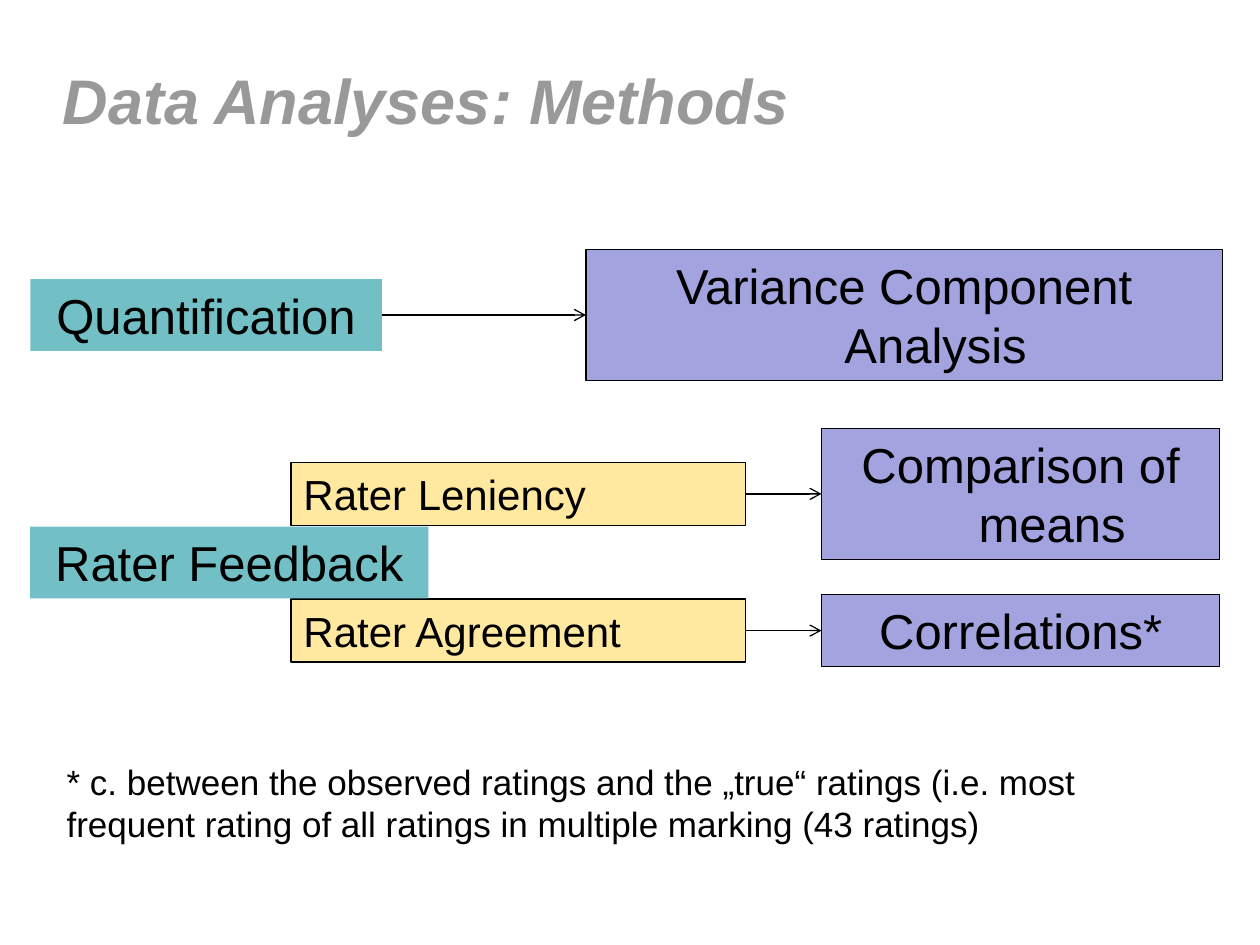
import pptx
import pptx.util
import pptx.dml.color
import pptx.enum.shapes
import pptx.enum.text
import pptx.oxml
import pptx.oxml.ns
from pptx.util import Inches

BLACK, GREY = "000000", "999999"
TEAL, YELLOW, VIOLET = "72BFC5", "FFE89F", "A3A3E0"
ALIGN = pptx.enum.text.PP_ALIGN
ANCHOR = pptx.enum.text.MSO_ANCHOR


def rgb(value):
    return pptx.dml.color.RGBColor.from_string(value)


def write(shape, text, size, color=BLACK, align=ALIGN.LEFT, anchor=ANCHOR.TOP, hanging=False):
    tf = shape.text_frame
    tf.word_wrap = True
    tf.vertical_anchor = anchor
    p = tf.paragraphs[0]
    p.text = text
    p.alignment = align
    if hanging:
        pPr = p._p.get_or_add_pPr()
        pPr.set("marL", str(Inches(0.5)))
        pPr.set("indent", str(-Inches(0.5)))
    p.font.name = "Arial"
    p.font.size = pptx.util.Pt(size)
    p.font.color.rgb = rgb(color)
    return p


def add_text(s, box, text, size, **style):
    return write(s.shapes.add_textbox(*map(Inches, box)), text, size, **style)


def add_box(s, box, text, size, fill, outlined=True, **style):
    sp = s.shapes.add_shape(pptx.enum.shapes.MSO_SHAPE.RECTANGLE, *map(Inches, box))
    sp.shadow.inherit = False
    sp.fill.solid()
    sp.fill.fore_color.rgb = rgb(fill)
    if outlined:
        sp.line.color.rgb = rgb(BLACK)
        sp.line.width = pptx.util.Pt(0.75)
    else:
        sp.line.fill.background()
    write(sp, text, size, **style)


def add_topic(s, box, text):
    add_box(s, box, text, 28, TEAL, outlined=False, align=ALIGN.CENTER)


def add_aspect(s, box, text):
    add_box(s, box, text, 24, YELLOW)


def add_method(s, box, text):
    add_box(s, box, text, 28, VIOLET, align=ALIGN.CENTER, hanging=True)


def add_arrow(s, x1, x2, y):
    line = s.shapes.add_connector(pptx.enum.shapes.MSO_CONNECTOR.STRAIGHT,
                                  Inches(x1), Inches(y), Inches(x2), Inches(y))
    line.line.color.rgb = rgb(BLACK)
    line.line.width = pptx.util.Pt(0.75)
    ns = pptx.oxml.ns.nsdecls("a")
    line.line._get_or_add_ln().append(pptx.oxml.parse_xml(f'<a:tailEnd {ns} type="arrow"/>'))
    line._element.spPr.append(pptx.oxml.parse_xml(f"<a:effectLst {ns}/>"))


def add_title(s, box):
    p = add_text(s, box, "Data Analyses: Methods", 36, color=GREY, anchor=ANCHOR.MIDDLE)
    p.font.bold = True
    p.font.italic = True


def add_quantification(s, box):
    left, top, width, height = box
    topic_w, topic_h, method_w = 2.79, 0.57, 5.05
    middle = top + height / 2
    method_x = left + width - method_w
    add_topic(s, (left, middle - topic_h / 2, topic_w, topic_h), "Quantification")
    add_method(s, (method_x, top, method_w, height), "Variance Component Analysis")
    add_arrow(s, left + topic_w, method_x, middle)


def add_feedback(s, box):
    left, top, width, height = box
    aspect_x, aspect_w, aspect_h = left + 2.07, 3.61, 0.5
    topic_w, topic_h = 3.16, 0.57
    method_w = 3.16
    method_x = left + width - method_w
    rows = [("Rater Leniency", "Comparison of means", top, 1.04),
            ("Rater Agreement", "Correlations*", top + height - 0.57, 0.57)]
    for aspect, method, method_y, method_h in rows:
        middle = method_y + method_h / 2
        add_aspect(s, (aspect_x, middle - aspect_h / 2, aspect_w, aspect_h), aspect)
        add_method(s, (method_x, method_y, method_w, method_h), method)
        add_arrow(s, aspect_x + aspect_w, method_x, middle)
    add_topic(s, (left, top + 0.78, topic_w, topic_h), "Rater Feedback")


def add_footnote(s, box):
    add_text(s, box, "* c. between the observed ratings and the „true“ ratings (i.e. most "
                     "frequent rating of all ratings in multiple marking (43 ratings)", 20)


def main():
    prs = pptx.Presentation()
    prs.slide_width, prs.slide_height = Inches(10), Inches(7.5)
    s = prs.slides.add_slide(prs.slide_layouts[6])
    add_title(s, (0.4, 0.44, 9.29, 0.7))
    add_quantification(s, (0.24, 1.98, 9.46, 1.04))
    add_feedback(s, (0.24, 3.4, 9.44, 1.89))
    add_footnote(s, (0.43, 5.99, 9.12, 0.77))
    prs.save("out.pptx")


if __name__ == "__main__":
    main()
